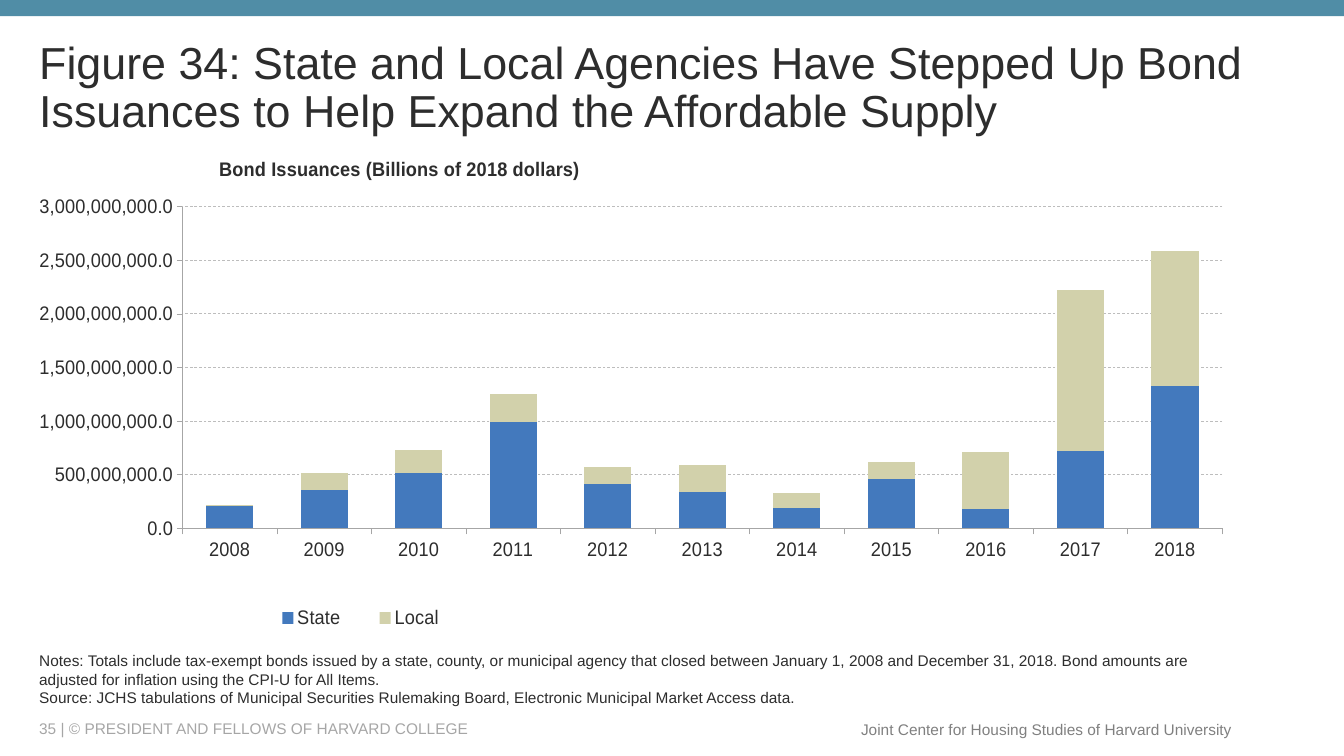
from lxml import etree
from pptx import Presentation
from pptx.chart.data import CategoryChartData
from pptx.dml.color import RGBColor
from pptx.enum.chart import XL_CHART_TYPE, XL_LEGEND_POSITION, XL_TICK_MARK
from pptx.enum.dml import MSO_LINE
from pptx.enum.shapes import MSO_SHAPE
from pptx.enum.text import MSO_ANCHOR, PP_ALIGN
from pptx.oxml.ns import qn
from pptx.util import Inches, Pt

MIDDLE, BOTTOM = MSO_ANCHOR.MIDDLE, MSO_ANCHOR.BOTTOM
LEFT, RIGHT = PP_ALIGN.LEFT, PP_ALIGN.RIGHT
FONT = "Arial"
WIDTH, HEIGHT = 13.33, 7.5
COLORS = {
    "band": "508DA6", "ink": "2D2D2D", "copyright": "A6A6A6", "center": "808080",
    "axis": "A6A6A6", "grid": "BDBDBD", "State": "4379BD", "Local": "D2D1AB",
}

# paragraphs, (left, top, width, height), size, color, anchor, alignment, line spacing, wrap
TEXTS = [
    (["35 | © PRESIDENT AND FELLOWS OF HARVARD COLLEGE"],
     (0.29, 7.13, 7.92, 0.2), 11, "copyright", MIDDLE, LEFT, 1, True),
    (["Joint Center for Housing Studies of Harvard University"],
     (8.42, 7.09, 3.9, 0.29), 11, "center", MIDDLE, RIGHT, 1, False),
    (["Figure 34: State and Local Agencies Have Stepped Up Bond Issuances "
      "to Help Expand the Affordable Supply"],
     (0.29, 0.4, 12.65, 0.97), 32, "ink", MIDDLE, LEFT, 0.9, True),
    (["Notes: Totals include tax-exempt bonds issued by a state, county, or municipal "
      "agency that closed between January 1, 2008 and December 31, 2018. Bond amounts "
      "are adjusted for inflation using the CPI-U for All Items.",
      "Source: JCHS tabulations of Municipal Securities Rulemaking Board, Electronic "
      "Municipal Market Access data."],
     (0.29, 6.48, 11.75, 0.58), 11, "ink", BOTTOM, LEFT, 1, True),
]

CHART_BOX = (0.39, 1.37, 11.92, 4.96)
CHART_TITLE = "Bond Issuances (Billions of 2018 dollars)"
YEARS = [str(year) for year in range(2008, 2019)]
MILLION = 10**6
ISSUANCES = {  # millions of dollars
    "State": [210, 360, 520, 990, 410, 340, 190, 460, 180, 720, 1330],
    "Local": [10, 160, 210, 260, 160, 250, 140, 160, 530, 1500, 1260],
}
# shares of the chart's size
PLOT_LAYOUT = {"x": 0.05, "y": 0.137, "w": 0.933, "h": 0.644}
TITLE_LAYOUT = {"x": 0.08, "y": 0.03}
LEGEND_LAYOUT = {"x": 0.11, "y": 0.92, "w": 0.2, "h": 0.08}


def color(name):
    return RGBColor.from_string(COLORS[name])


def style_font(font, size, color_name, bold=False):
    font.name, font.size, font.bold = FONT, Pt(size), bold
    font.color.rgb = color(color_name)


def style_line(line, color_name):
    line.color.rgb = color(color_name)
    line.width = Pt(0.5)


def add_text(slide, paragraphs, box, size, color_name, anchor, alignment, spacing, wrap):
    frame = slide.shapes.add_textbox(*map(Inches, box)).text_frame
    frame.word_wrap = wrap
    frame.vertical_anchor = anchor
    frame.text = "\n".join(paragraphs)
    for paragraph in frame.paragraphs:
        paragraph.alignment = alignment
        paragraph.line_spacing = spacing
        style_font(paragraph.runs[0].font, size, color_name)


def set_layout(element, shares, before, inner=False):
    """Place a chart part by hand, with its layout ahead of the first tag found in before."""
    for old in element.findall(qn("c:layout")):
        element.remove(old)
    layout = etree.Element(qn("c:layout"))
    manual = etree.SubElement(layout, qn("c:manualLayout"))
    settings = {"layoutTarget": "inner"} if inner else {}
    settings.update(xMode="edge", yMode="edge", **shares)
    for tag, value in settings.items():
        etree.SubElement(manual, qn("c:" + tag)).set("val", str(value))
    next(child for child in element if child.tag in map(qn, before)).addprevious(layout)


def add_bond_chart(slide):
    data = CategoryChartData(number_format="#,##0.0")
    data.categories = YEARS
    for name, millions in ISSUANCES.items():
        data.add_series(name, [value * MILLION for value in millions])
    chart = slide.shapes.add_chart(
        XL_CHART_TYPE.COLUMN_STACKED, *map(Inches, CHART_BOX), data).chart
    style_font(chart.font, 14, "ink")

    plot = chart.plots[0]
    plot.gap_width, plot.overlap, plot.vary_by_categories = 100, 100, False
    for series in plot.series:
        series.format.fill.solid()
        series.format.fill.fore_color.rgb = color(series.name)

    for axis in (chart.category_axis, chart.value_axis):
        axis.major_tick_mark = XL_TICK_MARK.OUTSIDE
        axis.minor_tick_mark = XL_TICK_MARK.NONE
        style_font(axis.tick_labels.font, 14, "ink")
        style_line(axis.format.line, "axis")
    value_axis = chart.value_axis
    value_axis.minimum_scale, value_axis.maximum_scale = 0, 3000 * MILLION
    value_axis.major_unit = 500 * MILLION
    value_axis.tick_labels.number_format = "#,##0.0"
    value_axis.tick_labels.number_format_is_linked = False
    grid_line = value_axis.major_gridlines.format.line
    style_line(grid_line, "grid")
    grid_line.dash_style = MSO_LINE.DASH

    title = chart.chart_title
    title.text_frame.text = CHART_TITLE
    style_font(title.text_frame.paragraphs[0].runs[0].font, 14, "ink", bold=True)
    chart.has_legend = True
    legend = chart.legend
    legend.position = XL_LEGEND_POSITION.BOTTOM
    legend.include_in_layout = False
    style_font(legend.font, 14, "ink")

    plot_area = chart.element.find(".//" + qn("c:plotArea"))
    set_layout(plot_area, PLOT_LAYOUT, ["c:barChart"], inner=True)
    set_layout(title.element if hasattr(title, "element") else title._element,
               TITLE_LAYOUT, ["c:overlay"])
    set_layout(chart.element.find(".//" + qn("c:legend")), LEGEND_LAYOUT, ["c:overlay"])


def main():
    presentation = Presentation()
    presentation.slide_width, presentation.slide_height = Inches(WIDTH), Inches(HEIGHT)
    slide = presentation.slides.add_slide(presentation.slide_layouts[6])

    band = slide.shapes.add_shape(MSO_SHAPE.RECTANGLE, 0, 0, Inches(WIDTH), Inches(0.16))
    band.shadow.inherit = False
    band.fill.solid()
    band.fill.fore_color.rgb = color("band")
    band.line.fill.background()

    for text in TEXTS:
        add_text(slide, *text)
    add_bond_chart(slide)
    presentation.save("out.pptx")


if __name__ == "__main__":
    main()
